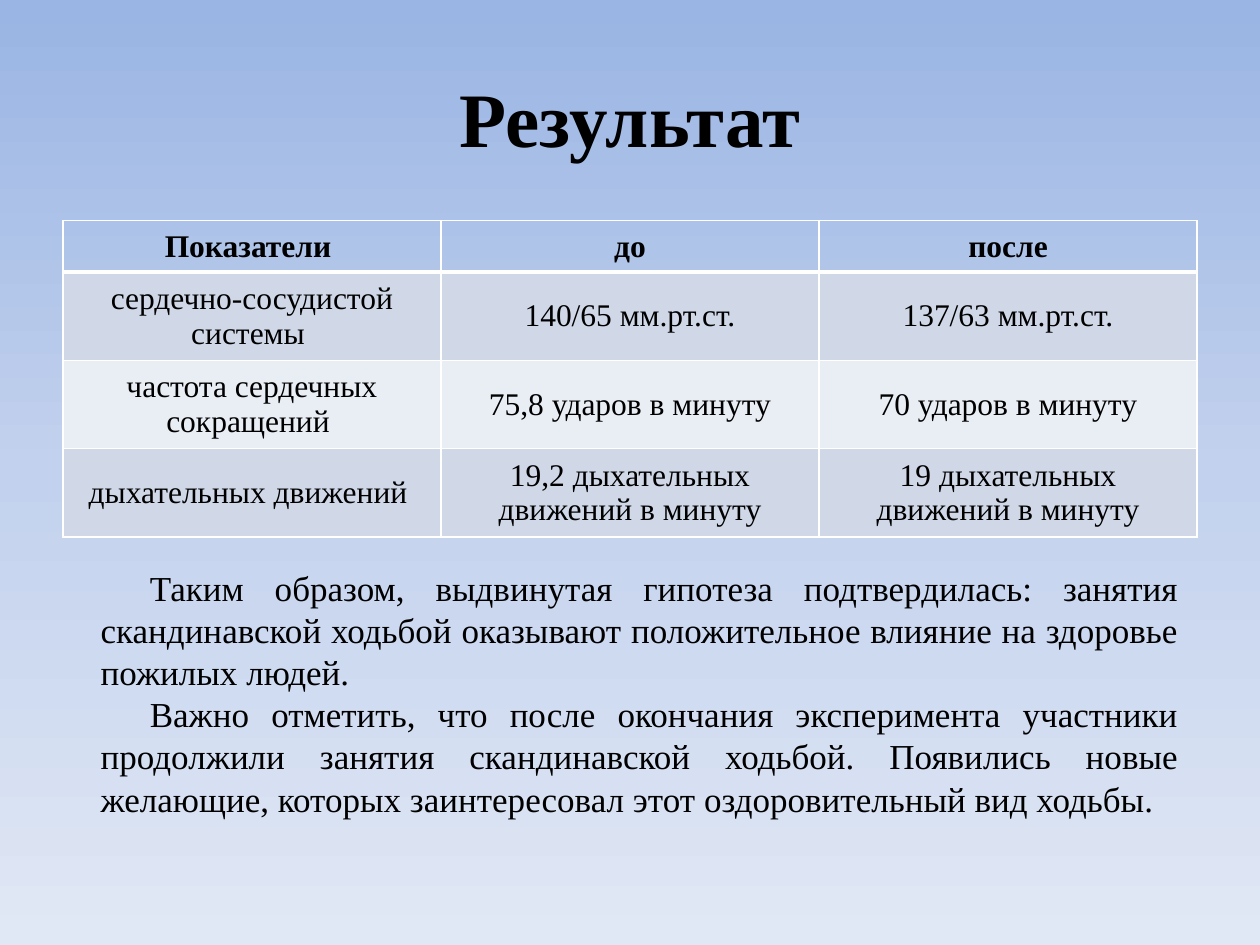
from copy import deepcopy

from lxml.etree import SubElement
from pptx import Presentation
from pptx.dml.color import RGBColor
from pptx.enum.text import MSO_ANCHOR, PP_ALIGN
from pptx.oxml.ns import qn
from pptx.util import Inches, Pt

COLORS = {
    "text": "000000",
    "border": "FFFFFF",
    "band_dark": "D0D8E8",
    "band_light": "E9EDF4",
    "sky_top": "9AB5E4",
    "sky_middle": "C2D1ED",
    "sky_bottom": "E1E8F5",
}
FONT = "Times New Roman"

ROWS = [
    ["Показатели ", "до", "после"],
    ["сердечно-сосудистой системы ", "140/65 мм.рт.ст.", "137/63 мм.рт.ст."],
    ["частота сердечных сокращений ", "75,8 ударов в минуту", "70 ударов в минуту"],
    ["дыхательных движений ", "19,2 дыхательных движений в минуту",
     "19 дыхательных движений в минуту"],
]
CONCLUSIONS = [
    "Таким образом, выдвинутая гипотеза подтвердилась: занятия скандинавской "
    "ходьбой оказывают положительное влияние на здоровье пожилых людей. ",
    "Важно отметить, что после окончания эксперимента участники продолжили "
    "занятия скандинавской ходьбой. Появились новые желающие, которых "
    "заинтересовал этот оздоровительный вид ходьбы. ",
]


def write_text(paragraph, text, size=18, bold=False, align=PP_ALIGN.CENTER, indent=0):
    paragraph.alignment = align
    if indent:
        properties = paragraph._p.get_or_add_pPr()
        properties.set("marL", "0")
        properties.set("indent", str(Inches(indent)))
    run = paragraph.add_run()
    run.text = text
    run.font.name = FONT
    run.font.size = Pt(size)
    run.font.bold = bold
    run.font.color.rgb = RGBColor.from_string(COLORS["text"])


class SlideBuilder:
    def __init__(self, slide, colors):
        self.slide = slide
        self.colors = colors

    def background(self, top, middle, bottom):
        fill = self.slide.background.fill
        fill.gradient()
        fill.gradient_angle = 270
        # A new gradient has two stops: add the middle one
        stop_list = self.slide.element.find(".//" + qn("a:gsLst"))
        stop_list.insert(1, deepcopy(stop_list[0]))
        for stop, name, position in zip(fill.gradient_stops, (top, middle, bottom), (0, 0.5, 1)):
            stop.color.rgb = RGBColor.from_string(self.colors[name])
            stop.position = position

    def text_box(self, left, top, width, height, texts, anchor=MSO_ANCHOR.TOP, **text_format):
        shape = self.slide.shapes.add_textbox(
            Inches(left), Inches(top), Inches(width), Inches(height))
        frame = shape.text_frame
        frame.word_wrap = True
        frame.vertical_anchor = anchor
        for index, text in enumerate(texts):
            paragraph = frame.add_paragraph() if index else frame.paragraphs[0]
            write_text(paragraph, text, **text_format)

    def cell_borders(self, cell, **widths):
        properties = cell._tc.get_or_add_tcPr()
        for side, width in widths.items():
            line = SubElement(properties, qn(f"a:ln{side}"), w=str(Pt(width)))
            solid = SubElement(line, qn("a:solidFill"))
            SubElement(solid, qn("a:srgbClr"), val=self.colors["border"])

    def table(self, left, top, width, rows, header_height, row_height):
        height = header_height + row_height * (len(rows) - 1)
        table = self.slide.shapes.add_table(
            len(rows), len(rows[0]), Inches(left), Inches(top),
            Inches(width), Inches(height)).table
        for row_index, texts in enumerate(rows):
            is_header = row_index == 0
            table.rows[row_index].height = Inches(header_height if is_header else row_height)
            for column_index, text in enumerate(texts):
                cell = table.cell(row_index, column_index)
                cell.vertical_anchor = MSO_ANCHOR.MIDDLE
                write_text(cell.text_frame.paragraphs[0], text, bold=is_header)
                self.cell_borders(cell, L=1, R=1, T=3 if row_index == 1 else 1,
                                  B=3 if is_header else 1)
                if is_header:
                    cell.fill.background()
                else:
                    band = "band_dark" if row_index % 2 else "band_light"
                    cell.fill.solid()
                    cell.fill.fore_color.rgb = RGBColor.from_string(self.colors[band])


def main():
    presentation = Presentation()
    presentation.slide_width = Inches(10)
    presentation.slide_height = Inches(7.5)
    slide = presentation.slides.add_slide(presentation.slide_layouts[6])
    builder = SlideBuilder(slide, COLORS)

    # Background and title
    builder.background("sky_top", "sky_middle", "sky_bottom")
    builder.text_box(0.5, 0.3, 9, 1.25, ["Результат"],
                     anchor=MSO_ANCHOR.MIDDLE, size=44, bold=True)

    # Measurements before and after
    builder.table(0.5, 1.75, 9, ROWS, header_height=0.41, row_height=0.65)

    # Conclusions
    builder.text_box(0.7, 4.45, 8.75, 2.12, CONCLUSIONS,
                     size=20, align=PP_ALIGN.JUSTIFY, indent=0.39)

    presentation.save("out.pptx")


if __name__ == "__main__":
    main()
